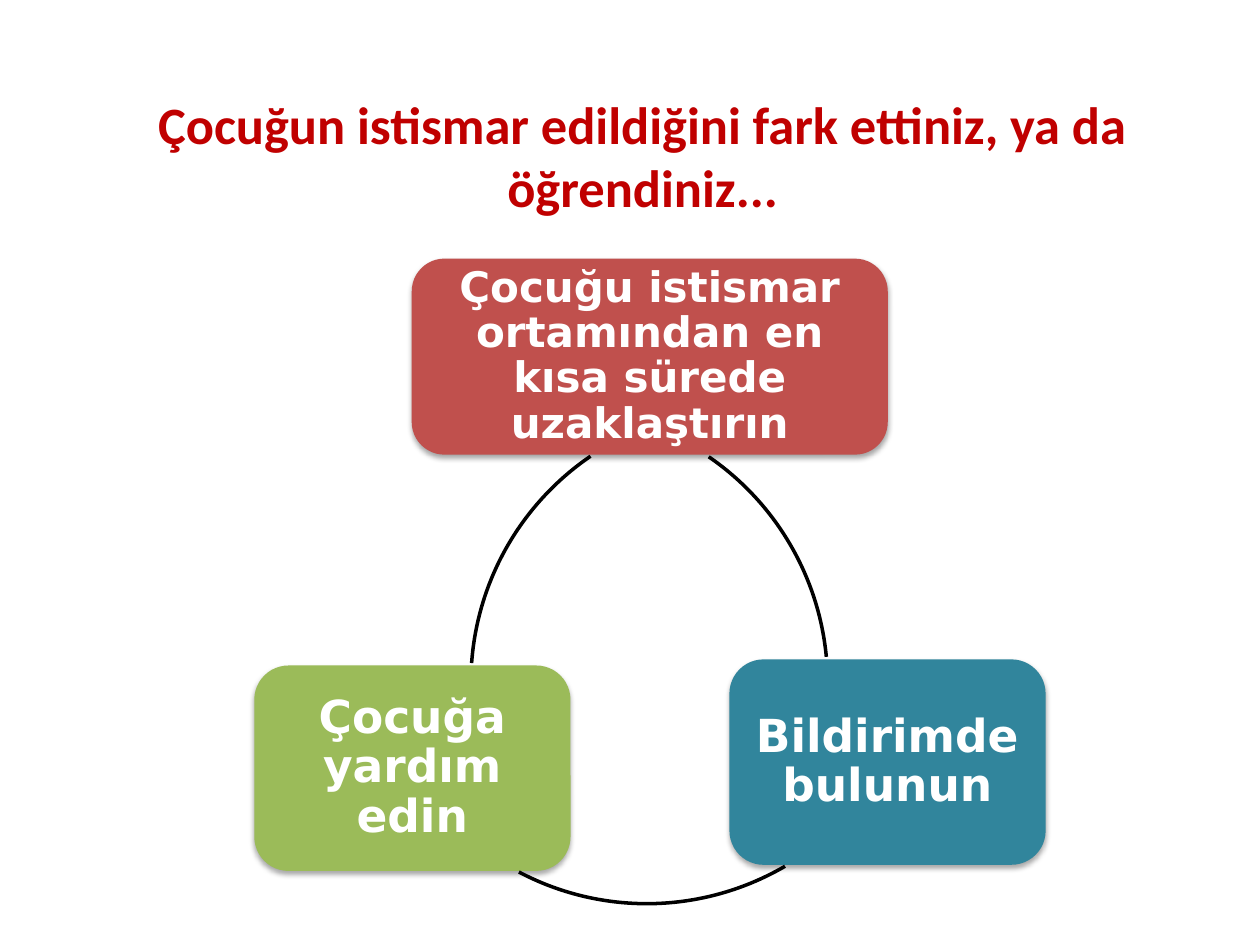
import pptx
import pptx.util
import pptx.dml.color
import pptx.enum.shapes
import pptx.enum.text
import pptx.oxml
import pptx.oxml.ns

Pt = pptx.util.Pt
SHAPES = pptx.enum.shapes.MSO_SHAPE
ARC_DIAMETER = 313.2
SHADOW = (
    f'<a:effectLst {pptx.oxml.ns.nsdecls("a")}>'
    '<a:outerShdw blurRad="39370" dist="22860" dir="5400000" rotWithShape="0">'
    '<a:srgbClr val="000000"><a:alpha val="35000"/></a:srgbClr>'
    '</a:outerShdw></a:effectLst>'
)


def color(value):
    """Return the colour for a hex string."""
    return pptx.dml.color.RGBColor.from_string(value)


def write_text(shape, text, font, size, text_color, line_spacing=1.0):
    """Write bold, centred text into a shape."""
    text_frame = shape.text_frame
    text_frame.word_wrap = True
    text_frame.vertical_anchor = pptx.enum.text.MSO_ANCHOR.MIDDLE
    text_frame.text = text
    paragraph = text_frame.paragraphs[0]
    paragraph.alignment = pptx.enum.text.PP_ALIGN.CENTER
    paragraph.line_spacing = line_spacing
    run_font = paragraph.runs[0].font
    run_font.name = font
    run_font.size = Pt(size)
    run_font.bold = True
    run_font.color.rgb = color(text_color)


def add_title(slide, box, text):
    """Add the red heading in the given box."""
    title = slide.shapes.add_textbox(*map(Pt, box))
    write_text(title, text, "Calibri", 30, "C00000")


def add_step(slide, box, text, size, fill, inset):
    """Add one rounded step of the cycle."""
    step = slide.shapes.add_shape(SHAPES.ROUNDED_RECTANGLE, *map(Pt, box))
    step.fill.solid()
    step.fill.fore_color.rgb = color(fill)
    step.line.fill.background()
    step.element.spPr.append(pptx.oxml.parse_xml(SHADOW))
    text_frame = step.text_frame
    text_frame.margin_left = text_frame.margin_right = Pt(inset)
    text_frame.margin_top = text_frame.margin_bottom = Pt(inset)
    write_text(step, text, "DejaVu Sans", size, "FFFFFF", 0.9)


def add_arc(slide, left, top, start, end):
    """Add an arc between two clockwise angles in degrees."""
    diameter = Pt(ARC_DIAMETER)
    arc = slide.shapes.add_shape(SHAPES.ARC, Pt(left), Pt(top), diameter, diameter)
    arc.adjustments[0] = start * 0.6
    arc.adjustments[1] = end * 0.6
    arc.fill.background()
    arc.line.color.rgb = color("000000")
    arc.line.width = Pt(2)
    arc.shadow.inherit = False


def add_cycle(slide, box):
    """Add the three steps and the arcs that join them."""
    left, top = box
    steps = [
        ((90, 0, 272, 112), "Çocuğu istismar ortamından en kısa sürede uzaklaştırın", 24, "C0504D", 7.2),
        ((271.5, 229, 180.7, 117.4), "Bildirimde bulunun", 26, "31859C", 7.9),
        ((0, 232.5, 180.7, 117.4), "Çocuğa yardım edin", 26, "9BBB59", 7.9),
    ]
    arcs = [(14.4, 85.7, 304.5, 354.6), (67.7, 55.4, 59.7, 117.8), (123.8, 85.7, 184.1, 235.7)]
    for (x, y, width, height), *content in steps:
        add_step(slide, (left + x, top + y, width, height), *content)
    for x, y, start, end in arcs:
        add_arc(slide, left + x, top + y, start, end)


def main():
    """Build and save the presentation."""
    presentation = pptx.Presentation()
    presentation.slide_width = Pt(720)
    presentation.slide_height = Pt(540)
    slide = presentation.slides.add_slide(presentation.slide_layouts[6])
    add_title(slide, (70.5, 49, 593.5, 79), "Çocuğun istismar edildiğini fark ettiniz, ya da öğrendiniz...")
    add_cycle(slide, (145.3, 147.8))
    presentation.save("out.pptx")


if __name__ == "__main__":
    main()
